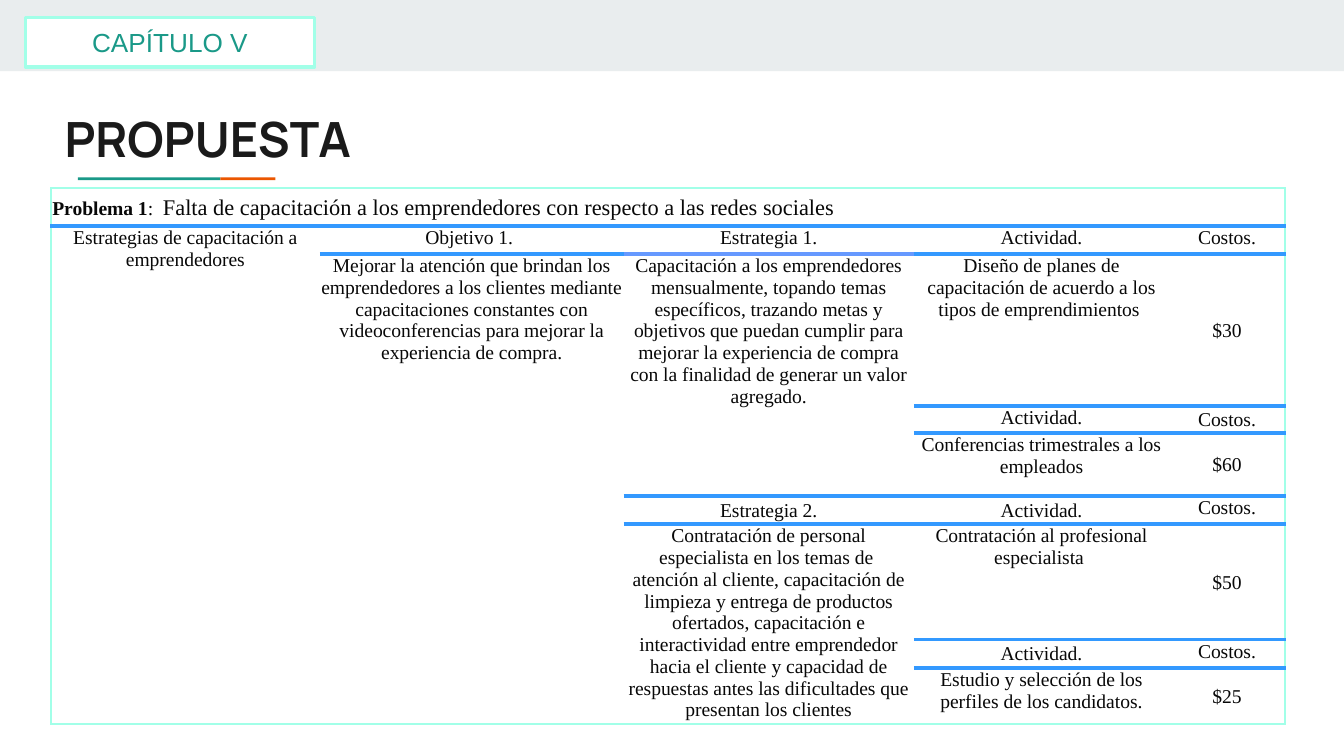
import pptx
import pptx.util
import pptx.dml.color
import pptx.enum.shapes
import pptx.enum.text
import pptx.oxml

Inches, Pt = pptx.util.Inches, pptx.util.Pt
ALIGN, ANCHOR = pptx.enum.text.PP_ALIGN, pptx.enum.text.MSO_ANCHOR
HUES = {"band": "E9EDEE", "teal": "1A9988", "orange": "EB5600",
        "mint": "A2FFE8", "blue": "3399FF", "violet": "6699FF",
        "white": "FFFFFF", "title": "1A1A1A", "text": "080808"}
SERIF = "Times New Roman"
COLS = [2, 2.26, 2.16, 1.9, 0.86]
ROWS = [0.28, 0.21, 1.13, 0.2, 0.47, 0.21, 0.86, 0.21, 0.42]

# Blocks: row, column, row span, text, centred vertically
BLOCKS = [
    (1, 0, 8, "Estrategias de capacitación a emprendedores", False),
    (1, 1, 1, "Objetivo 1. ", False),
    (2, 1, 7, "Mejorar la atención que brindan los emprendedores a los "
     "clientes mediante capacitaciones constantes con videoconferencias "
     "para mejorar la experiencia de compra.", False),
    (1, 2, 1, "Estrategia 1.", False),
    (2, 2, 3, "Capacitación a los emprendedores mensualmente, topando temas "
     "específicos, trazando metas y objetivos que puedan cumplir para "
     "mejorar la experiencia de compra con la finalidad de generar un "
     "valor agregado.", False),
    (5, 2, 1, "Estrategia 2.", True),
    (6, 2, 3, "Contratación de personal especialista en los temas de  "
     "atención al cliente, capacitación de limpieza y entrega de productos "
     "ofertados, capacitación e interactividad entre emprendedor hacia el "
     "cliente y capacidad de respuestas antes las dificultades que "
     "presentan los clientes", False),
]
# Activities: row, text, cost, heading centred, cost heading centred
TASKS = [
    (1, "Diseño de planes de capacitación de acuerdo a los tipos de "
     "emprendimientos ", "$30", False, False),
    (3, "Conferencias trimestrales a los empleados", "$60", False, True),
    (5, "Contratación al profesional especialista ", "$50", True, False),
    (7, "Estudio y selección de los perfiles de los candidatos.", "$25",
     True, False),
]


def rgb(name):
    return pptx.dml.color.RGBColor.from_string(HUES[name])


def style(font, face, size, hue):
    font.name, font.size = face, Pt(size)
    font.color.rgb = rgb(hue)


def add_box(slide, x, y, w, h, fill, line=None):
    box = slide.shapes.add_shape(pptx.enum.shapes.MSO_SHAPE.RECTANGLE,
                                 Inches(x), Inches(y), Inches(w), Inches(h))
    box.shadow.inherit = False
    box.fill.solid()
    box.fill.fore_color.rgb = rgb(fill)
    if line:
        box.line.color.rgb = rgb(line)
        box.line.width = Pt(2)
    else:
        box.line.fill.background()
    return box


def add_title(slide, text):
    title = slide.shapes.title
    title.left, title.top = Inches(0.38), Inches(0.71)
    title.width, title.height = Inches(8.41), Inches(0.59)
    frame = title.text_frame
    frame.margin_left = frame.margin_right = Inches(0.1)
    frame.margin_top = frame.margin_bottom = Inches(0.1)
    frame.vertical_anchor = ANCHOR.TOP
    frame.auto_size = pptx.enum.text.MSO_AUTO_SIZE.NONE
    frame.text = text
    para = frame.paragraphs[0]
    para.alignment = ALIGN.LEFT
    para.font.bold = True
    style(para.font, "Manrope", 26, "title")


def add_tag(slide, text):
    box = add_box(slide, 0.19, 0.13, 2.15, 0.37, "white", "mint")
    frame = box.text_frame
    frame.vertical_anchor = ANCHOR.MIDDLE
    frame.text = text
    para = frame.paragraphs[0]
    para.alignment = ALIGN.CENTER
    style(para.font, "Arial", 14, "teal")


def set_edge(cell, side, hue):
    props = cell._tc.get_or_add_tcPr()
    width = Pt(1 if hue == "mint" else 2.25) if hue else 0
    paint = (f'<a:solidFill><a:srgbClr val="{HUES[hue]}"/></a:solidFill>'
             if hue else "<a:noFill/>")
    props.append(pptx.oxml.parse_xml(
        '<a:ln%s xmlns:a="http://schemas.openxmlformats.org/drawingml/2006/'
        'main" w="%d">%s</a:ln%s>' % (side, width, paint, side)))


def row_hue(edge, col):
    """Colour of the horizontal rule above the given row."""
    if edge in (0, len(ROWS)):
        return "mint"
    return "violet" if (edge, col) == (2, 2) else "blue"


def add_block(table, row, col, high, wide=1, mid=False):
    """Merge, fill and rule a block; return its first paragraph."""
    end, last = row + high, col + wide
    for r in range(row, end):
        for c in range(col, last):
            cell = table.cell(r, c)
            set_edge(cell, "L", "mint" if col == 0 else None)
            set_edge(cell, "R", "mint" if last == len(COLS) else None)
            set_edge(cell, "T", row_hue(row, col))
            set_edge(cell, "B", row_hue(end, col))
            cell.fill.solid()
            cell.fill.fore_color.rgb = rgb("white")
    first = table.cell(row, col)
    if high * wide > 1:
        first.merge(table.cell(end - 1, last - 1))
    first.margin_left = first.margin_right = first.margin_top = Inches(0.01)
    first.margin_bottom = 0
    first.vertical_anchor = ANCHOR.MIDDLE if mid else ANCHOR.TOP
    para = first.text_frame.paragraphs[0]
    style(para.font, SERIF, 10.5, "text")
    return para


def add_text(table, row, col, high, text, mid):
    para = add_block(table, row, col, high, mid=mid)
    para.alignment = ALIGN.CENTER
    para.add_run().text = text


def add_plan(slide):
    table = slide.shapes.add_table(
        len(ROWS), len(COLS), Inches(0.38), Inches(1.4),
        Inches(sum(COLS)), Inches(sum(ROWS))).table
    table.first_row = table.horz_banding = False
    for col, width in zip(table.columns, COLS):
        col.width = Inches(width)
    for row, height in zip(table.rows, ROWS):
        row.height = Inches(height)

    # Problem row
    para = add_block(table, 0, 0, 1, len(COLS), True)
    for text, size, bold in (
            ("Problema 1", 10.5, True), (":  ", 10.5, False),
            ("Falta de capacitación a los emprendedores con respecto a las "
             "redes sociales", 12, False)):
        run = para.add_run()
        run.text, run.font.bold, run.font.size = text, bold, Pt(size)

    # Goals, strategies, activities and costs
    for block in BLOCKS:
        add_text(table, *block)
    for row, task, cost, mid, cost_mid in TASKS:
        add_text(table, row, 3, 1, "Actividad.", mid)
        add_text(table, row, 4, 1, "Costos.", cost_mid)
        add_text(table, row + 1, 3, 1, task, False)
        add_text(table, row + 1, 4, 1, cost, True)


def main():
    deck = pptx.Presentation()
    # Widescreen, 16 to 9
    deck.slide_width = Inches(10)
    deck.slide_height = deck.slide_width * 9 // 16
    slide = deck.slides.add_slide(deck.slide_layouts[5])
    # Header band and title rule
    add_box(slide, 0, 0, 10, 0.53, "band")
    add_box(slide, 0.58, 1.32, 1.06, 0.02, "teal")
    add_box(slide, 1.64, 1.32, 0.41, 0.02, "orange")
    # Content
    add_title(slide, "PROPUESTA")
    add_tag(slide, "CAPÍTULO V")
    add_plan(slide)
    deck.save("out.pptx")


if __name__ == "__main__":
    main()
